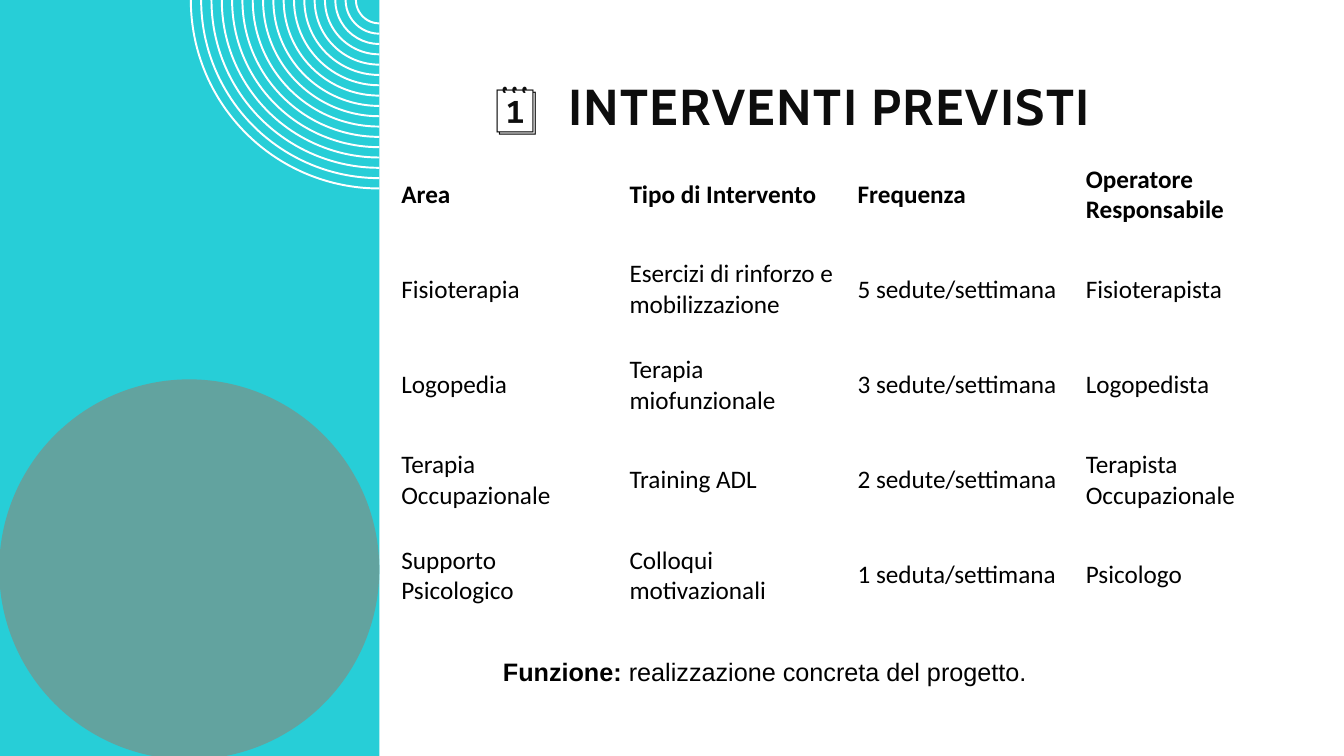
from lxml import etree
from pptx import Presentation
from pptx.dml.color import RGBColor
from pptx.enum.shapes import MSO_SHAPE
from pptx.enum.text import MSO_ANCHOR, MSO_AUTO_SIZE, PP_ALIGN
from pptx.oxml.ns import qn
from pptx.util import Cm, Pt

RECTANGLE, OVAL = MSO_SHAPE.RECTANGLE, MSO_SHAPE.OVAL
MIDDLE, LEFT = MSO_ANCHOR.MIDDLE, PP_ALIGN.LEFT
FIT_SHAPE, NO_FIT = MSO_AUTO_SIZE.SHAPE_TO_FIT_TEXT, MSO_AUTO_SIZE.NONE

TURQUOISE, SAGE, WHITE = "27CED7", "62A39F", "FFFFFF"
BLACK, NEAR_BLACK = "000000", "0D0D0D"
PANEL_WIDTH = 9.56
DEGREE = 60000

INTERVENTIONS = [
    ("Area", "Tipo di Intervento", "Frequenza", "Operatore Responsabile"),
    ("Fisioterapia", "Esercizi di rinforzo e mobilizzazione",
     "5 sedute/settimana", "Fisioterapista"),
    ("Logopedia", "Terapia miofunzionale", "3 sedute/settimana", "Logopedista"),
    ("Terapia Occupazionale", "Training ADL",
     "2 sedute/settimana", "Terapista Occupazionale"),
    ("Supporto Psicologico", "Colloqui motivazionali",
     "1 seduta/settimana", "Psicologo"),
]
ROW_HEIGHTS = (1.73, 3.02, 1.73, 3.02, 1.73)


def color(hex_string):
    return RGBColor.from_string(hex_string)


def add_flat_shape(slide, kind, left, top, width, height, fill):
    shape = slide.shapes.add_shape(kind, Cm(left), Cm(top), Cm(width), Cm(height))
    shape.shadow.inherit = False
    shape.fill.solid()
    shape.fill.fore_color.rgb = color(fill)
    shape.line.fill.background()


def add_rings(slide, count=17, outer_radius=4.75, step=0.26):
    """Draw concentric quarter circles around the panel's top right corner."""
    radii = [Cm(outer_radius - index * step) for index in range(count)]
    corner = Cm(PANEL_WIDTH)
    builder = slide.shapes.build_freeform(corner - radii[0], 0)
    for radius in radii:
        if radius != radii[0]:
            builder.move_to(corner - radius, 0)
        builder.add_line_segments([(corner, radius)], close=False)
    rings = builder.convert_to_shape()
    segments = list(rings.element.iter(qn("a:lnTo")))
    for segment, radius in zip(segments, radii):
        arc = etree.Element(qn("a:arcTo"), wR=str(radius), hR=str(radius),
                            stAng=str(180 * DEGREE), swAng=str(-90 * DEGREE))
        segment.getparent().replace(segment, arc)
    rings.shadow.inherit = False
    rings.fill.background()
    rings.line.color.rgb = color(WHITE)
    rings.line.width = Pt(1.4)


def add_run(paragraph, text, font, size, fill, bold=False, spacing=None):
    run = paragraph.add_run()
    run.text = text
    run.font.name = font
    run.font.size = Pt(size)
    run.font.bold = bold
    run.font.color.rgb = color(fill)
    if spacing is not None:
        run.font._element.set("spc", str(spacing * 100))


def place(placeholder, left, top, width, height, fit):
    """Position a placeholder in front and return its first paragraph."""
    placeholder.element.getparent().append(placeholder.element)
    placeholder.left, placeholder.top = Cm(left), Cm(top)
    placeholder.width, placeholder.height = Cm(width), Cm(height)
    frame = placeholder.text_frame
    frame.word_wrap = True
    frame.auto_size = fit
    frame.vertical_anchor = MIDDLE
    paragraph = frame.paragraphs[0]
    paragraph.alignment = LEFT
    return paragraph


def fill_title(title):
    paragraph = place(title, 12.12, 1.5, 19.56, 2.29, NO_FIT)
    title.text_frame.margin_top = title.text_frame.margin_bottom = 0
    add_run(paragraph, "🗓️ ", "Cabin", 36, NEAR_BLACK, spacing=1)
    add_run(paragraph, " INTERVENTI PREVISTI", "Cabin", 36, NEAR_BLACK, True, 1)


def fill_purpose(body):
    paragraph = place(body, 12.42, 16.41, 18.36, 1.02, FIT_SHAPE)
    properties = paragraph._p.get_or_add_pPr()
    properties.set("marL", "0")
    properties.set("indent", "0")
    etree.SubElement(properties, qn("a:buNone"))
    paragraph.space_before = Pt(0)
    add_run(paragraph, "Funzione:", "Arial", 18, BLACK, True)
    add_run(paragraph, " realizzazione concreta del progetto.", "Arial", 18, BLACK)


def add_intervention_table(slide):
    frame = slide.shapes.add_table(len(INTERVENTIONS), len(INTERVENTIONS[0]),
                                   Cm(9.86), Cm(4.01), Cm(23), Cm(sum(ROW_HEIGHTS)))
    table = frame.table
    table.first_row = table.horz_banding = False
    for row, height in zip(table.rows, ROW_HEIGHTS):
        row.height = Cm(height)
    for row_index, texts in enumerate(INTERVENTIONS):
        for column_index, text in enumerate(texts):
            cell = table.cell(row_index, column_index)
            cell.fill.background()
            cell.vertical_anchor = MIDDLE
            add_run(cell.text_frame.paragraphs[0], text, "Calibri", 18, BLACK,
                    bold=row_index == 0)


def main():
    presentation = Presentation()
    presentation.slide_width, presentation.slide_height = Cm(33.87), Cm(19.05)
    slide = presentation.slides.add_slide(presentation.slide_layouts[1])
    add_flat_shape(slide, RECTANGLE, 0, 0, PANEL_WIDTH, 19.05, TURQUOISE)
    add_rings(slide)
    add_flat_shape(slide, OVAL, -0.02, 9.56, 9.58, 9.58, SAGE)
    fill_title(slide.shapes.title)
    fill_purpose(slide.placeholders[1])
    add_intervention_table(slide)
    presentation.save("out.pptx")


if __name__ == "__main__":
    main()
